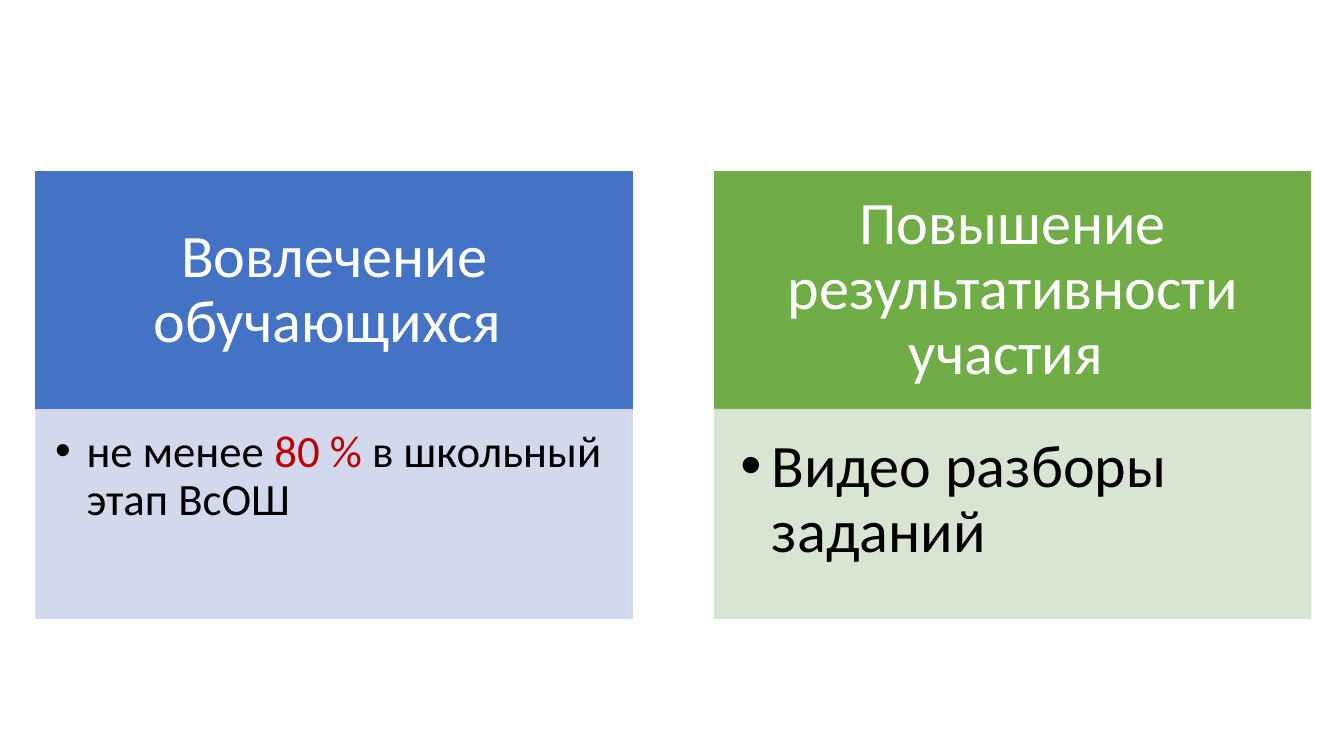
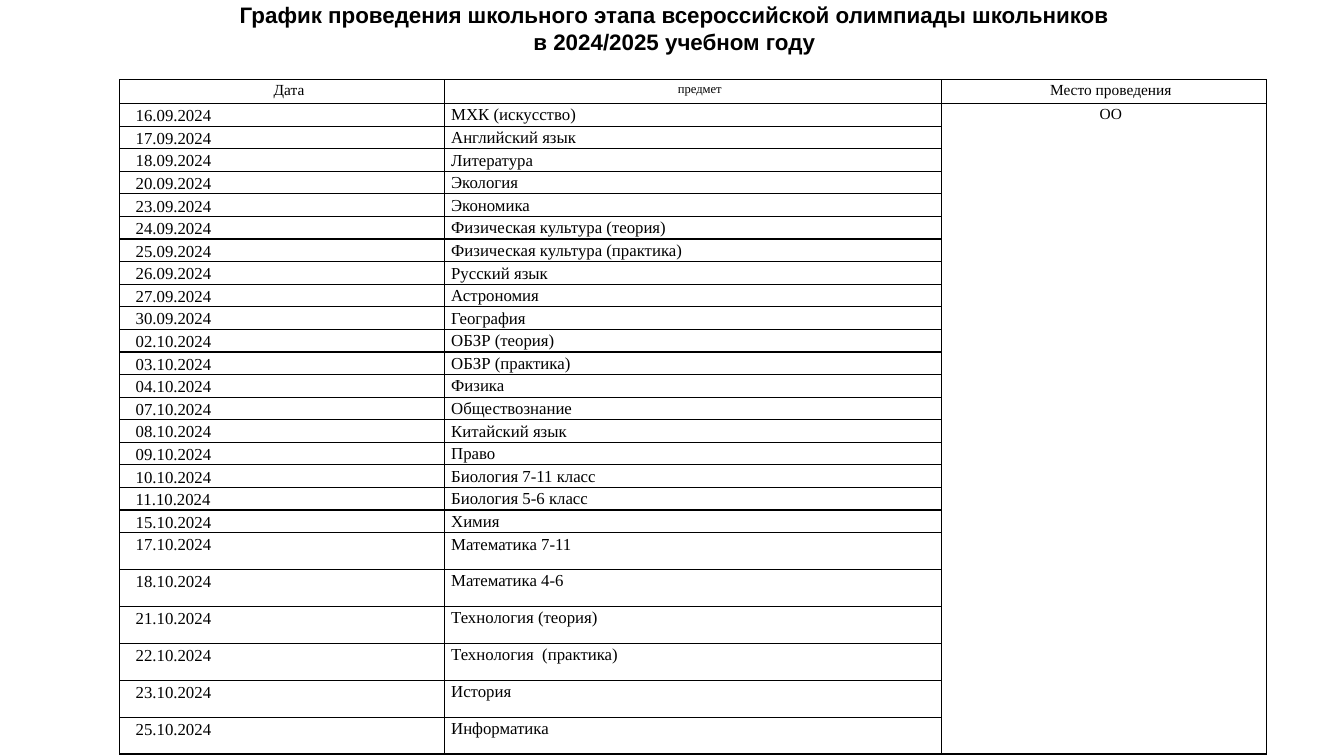
from lxml import etree
from pptx import Presentation
from pptx import util as u
from pptx.dml.color import RGBColor
from pptx.enum import text
from pptx.oxml.ns import qn

COLORS = {
    "black": "000000", "white": "FFFFFF", "red": "C00000",
    "blue": "4472C4", "pale_blue": "CFD5EA",
    "green": "70AD47", "pale_green": "D5E3CF",
}
COMPARISON, TITLE_ONLY = 4, 5
LEFT, TOP, PITCH, WIDTH = 0.91, 4.32, 17.22, 15.02
HEAD_HEIGHT, LIST_HEIGHT = 6, 5.26

GOALS = [
    ("Вовлечение обучающихся ", "blue", "pale_blue", 32,
     [("не менее ", "black"), ("80 %", "red"), (" в школьный этап ВсОШ", "black")]),
    ("Повышение результативности участия ", "green", "pale_green", 43,
     [("Видео разборы заданий", "black")]),
]
TITLE = [
    "График проведения школьного этапа всероссийской олимпиады школьников",
    "в 2024/2025 учебном году",
]
HEADERS = [("Дата", 11), ("предмет", 9), ("Место проведения", 11)]
PLACE = "ОО"
COLUMNS = [8.18, 12.52, 8.2]
HEADER_ROW, SHORT_ROW, TALL_ROW = 0.6, 0.57, 0.93
SHORT_COUNT = 19
SCHEDULE = [
    ("16.09.2024", "МХК (искусство)"),
    ("17.09.2024", "Английский язык"),
    ("18.09.2024", "Литература"),
    ("20.09.2024", "Экология"),
    ("23.09.2024", "Экономика"),
    ("24.09.2024", "Физическая культура (теория)"),
    ("25.09.2024", "Физическая культура (практика)"),
    ("26.09.2024", "Русский язык"),
    ("27.09.2024", "Астрономия"),
    ("30.09.2024", "География"),
    ("02.10.2024", "ОБЗР (теория)"),
    ("03.10.2024", "ОБЗР (практика)"),
    ("04.10.2024", "Физика"),
    ("07.10.2024", "Обществознание"),
    ("08.10.2024", "Китайский язык"),
    ("09.10.2024", "Право"),
    ("10.10.2024", "Биология 7-11 класс"),
    ("11.10.2024", "Биология 5-6 класс"),
    ("15.10.2024", "Химия"),
    ("17.10.2024", "Математика 7-11"),
    ("18.10.2024", "Математика 4-6"),
    ("21.10.2024", "Технология (теория)"),
    ("22.10.2024", "Технология  (практика)"),
    ("23.10.2024", "История"),
    ("25.10.2024", "Информатика"),
]


def rgb(name):
    """Return the named colour."""
    return RGBColor.from_string(COLORS[name])


def style(p, font, size, color="black", bold=False, align=None, spacing=1.0):
    """Format one paragraph."""
    p.font.name, p.font.size, p.font.bold = font, u.Pt(size), bold
    p.font.color.rgb = rgb(color)
    p.alignment, p.line_spacing = align, spacing
    p.space_before = p.space_after = u.Pt(0)


def indent(p, left, first=0):
    """Set the left and first-line indents in centimetres."""
    pPr = p._p.get_or_add_pPr()
    pPr.set("marL", str(u.Cm(left)))
    pPr.set("indent", str(u.Cm(first)))
    return pPr


def place(sp, left, top, width, height, insets, anchor):
    """Move a placeholder and set its text frame; return the frame."""
    sp.left, sp.top = u.Cm(left), u.Cm(top)
    sp.width, sp.height = u.Cm(width), u.Cm(height)
    tf = sp.text_frame
    tf.word_wrap, tf.auto_size = True, text.MSO_AUTO_SIZE.NONE
    tf.vertical_anchor = anchor
    (tf.margin_left, tf.margin_top,
     tf.margin_right, tf.margin_bottom) = map(u.Cm, insets)
    return tf


def paint(sp, color, opacity=100):
    """Give a shape one colour for fill and line."""
    sp.fill.solid()
    sp.fill.fore_color.rgb = sp.line.color.rgb = rgb(color)
    sp.line.width = u.Pt(1)
    if opacity < 100:
        for clr in sp._element.spPr.iter(qn("a:srgbClr")):
            etree.SubElement(clr, qn("a:alpha"), val=str(opacity * 1000))


def add_heading(sp, left, words, color):
    """Fill the coloured heading of a goal."""
    tf = place(sp, left, TOP, WIDTH, HEAD_HEIGHT, (0.84, 0.48, 0.84, 0.48),
               text.MSO_ANCHOR.MIDDLE)
    paint(sp, color)
    tf.text = words
    style(tf.paragraphs[0], "Calibri", 43, "white",
          align=text.PP_ALIGN.CENTER, spacing=0.9)


def add_list(sp, left, runs, color, size):
    """Fill the pale bulleted panel of a goal."""
    insets = [round(size * k, 2) for k in (0.015, 0.015, 0.02, 0.0225)]
    tf = place(sp, left, TOP + HEAD_HEIGHT, WIDTH, LIST_HEIGHT, insets,
               text.MSO_ANCHOR.TOP)
    paint(sp, color, opacity=90)
    p = tf.paragraphs[0]
    style(p, "Calibri", size, spacing=0.9)
    pPr = indent(p, 0.79, -0.79)
    bullet = etree.Element(qn("a:buChar"), char="•")
    pPr.find(qn("a:defRPr")).addprevious(bullet)
    for words, run_color in runs:
        r = p.add_run()
        r.text = words
        r.font.color.rgb = rgb(run_color)


def add_borders(cell):
    """Draw thin black borders round a cell."""
    tcPr = cell._tc.get_or_add_tcPr()
    for i, side in enumerate(("lnL", "lnR", "lnT", "lnB")):
        ln = etree.Element(qn("a:" + side), w=str(u.Pt(1)))
        fill = etree.SubElement(ln, qn("a:solidFill"))
        etree.SubElement(fill, qn("a:srgbClr"), val=COLORS["black"])
        tcPr.insert(i, ln)


def fill_cell(cell, words, size=12, align=None, left=0.25, spacing=1.07):
    """Write and format one table cell."""
    cell.margin_left, cell.margin_right = u.Cm(0.15), u.Cm(0.05)
    cell.margin_top, cell.margin_bottom = u.Cm(0.03), u.Cm(0)
    cell.text = words
    p = cell.text_frame.paragraphs[0]
    style(p, "Times New Roman", size, align=align, spacing=spacing)
    indent(p, left)
    cell.fill.background()
    add_borders(cell)


def add_schedule(slide):
    """Add the table of dates and subjects."""
    heights = [HEADER_ROW] + [SHORT_ROW if i < SHORT_COUNT else TALL_ROW
                              for i in range(len(SCHEDULE))]
    table = slide.shapes.add_table(
        len(heights), len(COLUMNS), u.Cm(3.02), u.Cm(2.01),
        u.Cm(sum(COLUMNS)), u.Cm(sum(heights))).table
    table.first_row = table.horz_banding = False
    for column, width in zip(table.columns, COLUMNS):
        column.width = u.Cm(width)
    for row, height in zip(table.rows, heights):
        row.height = u.Cm(height)
    center = text.PP_ALIGN.CENTER
    for i, (words, size) in enumerate(HEADERS):
        fill_cell(table.cell(0, i), words, size, center)
    for i, (date, subject) in enumerate(SCHEDULE, 1):
        fill_cell(table.cell(i, 0), date, spacing=1.11)
        fill_cell(table.cell(i, 1), subject, left=0.02)
        fill_cell(table.cell(i, 2), PLACE if i == 1 else "", 11, center)
    table.cell(1, 2).merge(table.cell(len(SCHEDULE), 2))


def add_title(slide):
    """Fill the slide title."""
    tf = place(slide.shapes.title, 3.94, 0, 26.11, 1.42, (0, 0, 0, 0),
               text.MSO_ANCHOR.MIDDLE)
    tf.text = "\n".join(TITLE)
    for p in tf.paragraphs:
        style(p, "Arial", 16, bold=True, align=text.PP_ALIGN.CENTER)


def build_goals(prs):
    """Build the slide with the two goals."""
    slide = prs.slides.add_slide(prs.slide_layouts[COMPARISON])
    title = slide.shapes.title._element
    title.getparent().remove(title)
    holders = list(slide.placeholders)
    for i, (heading, color, pale, size, runs) in enumerate(GOALS):
        left = LEFT + i * PITCH - i * 0.12
        add_heading(holders[2 * i], left, heading, color)
        add_list(holders[2 * i + 1], left, runs, pale, size)


def build_schedule(prs):
    """Build the slide with the schedule."""
    slide = prs.slides.add_slide(prs.slide_layouts[TITLE_ONLY])
    add_title(slide)
    add_schedule(slide)


def main():
    """Build and save the presentation."""
    prs = Presentation()
    prs.slide_width, prs.slide_height = u.Cm(33.87), u.Cm(19.05)
    build_goals(prs)
    build_schedule(prs)
    prs.save("out.pptx")


if __name__ == "__main__":
    main()
